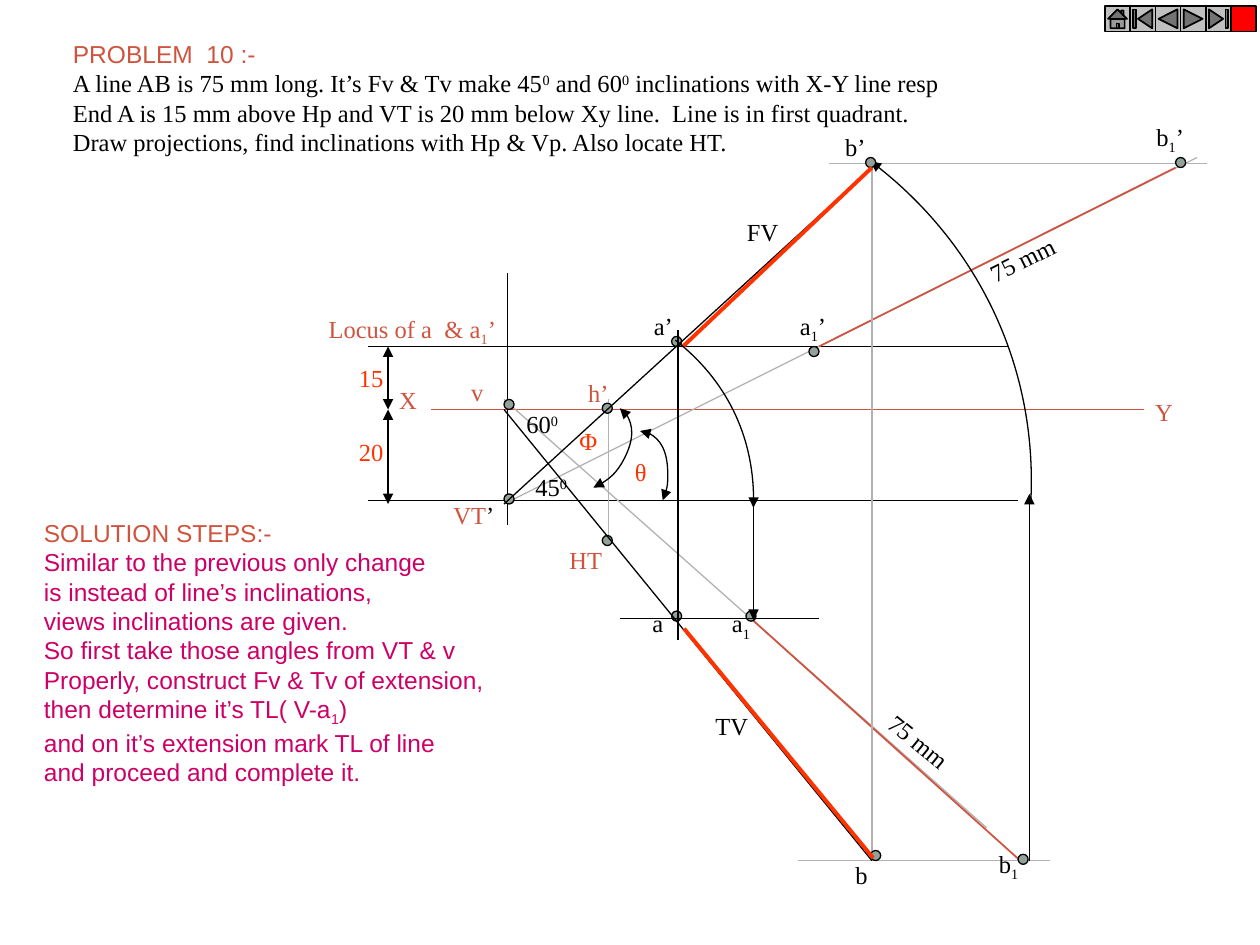
from copy import deepcopy
from dataclasses import dataclass

from lxml import etree
from pptx import Presentation
from pptx.dml.color import RGBColor
from pptx.enum.shapes import MSO_CONNECTOR, MSO_SHAPE as SHAPE
from pptx.enum.text import MSO_AUTO_SIZE
from pptx.oxml.ns import qn
from pptx.util import Inches, Pt


@dataclass(frozen=True)
class Theme:
    paper: str = "FFFFFF"
    ink: str = "000000"
    accent: str = "CF543F"
    red: str = "FF3300"
    magenta: str = "CC0066"
    gray: str = "B2B2B2"
    dot: str = "93A299"
    button: str = "C0C0C0"
    stop: str = "FF0000"
    sans: str = "Arial"
    serif: str = "Times New Roman"
    size: float = 14
    thin: float = 0.75
    medium: float = 1
    thick: float = 2.25


T = Theme()
BASELINES = {"^": "30000", "_": "-25000"}


def rgb(value):
    return RGBColor.from_string(value)


def add_text(slide, x, y, w, h, lines, rotation=0):
    sp = slide.shapes.add_textbox(Inches(x), Inches(y), Inches(w), Inches(h))
    sp.rotation = rotation
    tf = sp.text_frame
    tf.word_wrap = False
    tf.auto_size = MSO_AUTO_SIZE.SHAPE_TO_FIT_TEXT
    for i, (text, color, font) in enumerate(lines):
        p = tf.add_paragraph() if i else tf.paragraphs[0]
        p.font.size, p.font.name = Pt(T.size), font
        p.font.color.rgb = rgb(color)
        for piece in text.split("|"):
            r = p.add_run()
            r.text = piece.lstrip("^_")
            if piece[0] in BASELINES:
                r.font._element.set("baseline", BASELINES[piece[0]])
    return tf


def style_line(sp, color, width, head=False, tail=False):
    sp.line.color.rgb = rgb(color)
    sp.line.width = Pt(width)
    ln = sp.line._get_or_add_ln()
    for tag, wanted in (("a:headEnd", head), ("a:tailEnd", tail)):
        if wanted:
            etree.SubElement(ln, qn(tag)).set("type", "triangle")


def add_line(slide, x1, y1, x2, y2, color=T.ink, width=T.thin, head=False, tail=False):
    sp = slide.shapes.add_connector(
        MSO_CONNECTOR.STRAIGHT, Inches(x1), Inches(y1), Inches(x2), Inches(y2))
    style_line(sp, color, width, head, tail)
    etree.SubElement(sp._element.spPr, qn("a:effectLst"))


def add_preset(slide, kind, x, y, w, h, fill):
    sp = slide.shapes.add_shape(kind, Inches(x), Inches(y), Inches(w), Inches(h))
    sp.shadow.inherit = False
    sp.fill.solid()
    sp.fill.fore_color.rgb = rgb(fill)
    return sp


def add_arc(slide, x, y, center, points, tail=False):
    start, *rest = [(Inches(x + px), Inches(y + py)) for px, py in (*points, center)]
    fb = slide.shapes.build_freeform(*start)
    fb.add_line_segments(rest, close=False)
    sp = fb.convert_to_shape()
    sp.shadow.inherit = False
    sp.fill.background()
    style_line(sp, T.ink, T.thin, True, tail)

    arc = next(sp._element.iter(qn("a:path")))
    *controls, spoke = arc.findall(qn("a:lnTo"))
    for i in range(0, len(controls), 3):
        curve = etree.Element(qn("a:cubicBezTo"))
        controls[i].addprevious(curve)
        for segment in controls[i:i + 3]:
            curve.append(segment[0])
            arc.remove(segment)
    sector = deepcopy(arc)
    sector.set("stroke", "0")
    etree.SubElement(sector, qn("a:close"))
    arc.remove(spoke)
    arc.set("fill", "none")
    arc.addnext(sector)


def panel(slide, x, y, w, h):
    sp = add_preset(slide, SHAPE.ROUNDED_RECTANGLE, x, y, w, h, T.paper)
    sp.adjustments[0] = 0.017
    sp.line.fill.background()


def problem(slide, x, y, w, h):
    body = (
        "A line AB is 75 mm long. It’s Fv & Tv make 45|^0| and 60|^0| inclinations with X-Y line resp",
        "End A is 15 mm above Hp and VT is 20 mm below Xy line.  Line is in first quadrant.",
        "Draw projections, find inclinations with Hp & Vp. Also locate HT.",
    )
    add_text(slide, x, y, w, h, [("PROBLEM  10 :-", T.accent, T.sans)]
             + [(line, T.ink, T.serif) for line in body])


def solution(slide, x, y, w, h):
    steps = (
        "Similar to the previous only change",
        "is instead of line’s inclinations,",
        "views inclinations are given.",
        "So first take those angles from VT & v",
        "Properly, construct Fv & Tv of extension,",
        "then determine it’s TL( V-a|_1|)",
        "and on it’s extension mark TL of line",
        "and proceed and complete it.",
    )
    add_text(slide, x, y, w, h, [("SOLUTION STEPS:-", T.accent, T.sans)]
             + [(step, T.magenta, T.sans) for step in steps])


def construction(slide, x, y):
    lines = (
        (1.42, 2.25, 7.08, 2.25, T.accent),
        (2.03, 1.17, 2.03, 3.17),
        (0.92, 2.97, 6.08, 2.97),
        (0.92, 1.75, 6, 1.75),
        (1.08, 1.75, 1.08, 2.25, T.ink, T.thin, True, True),
        (1.08, 2.25, 1.08, 3, T.ink, T.thin, True, True),
        (2, 3, 7.5, 0.25, T.gray),
        (4.5, 1.75, 7.33, 0.33, T.accent, T.medium),
        (2, 2.17, 5.83, 5.57, T.gray),
        (3.95, 3.9, 6.13, 5.86, T.accent, T.medium),
        (4.33, 5.83, 6.33, 5.83, T.gray),
        (7.58, 0.3, 4.58, 0.3, T.gray),
        (6.17, 5.83, 6.17, 2.92, T.ink, T.thin, False, True),
        (4.92, 0.33, 4.92, 5.83, T.gray),
        (2.83, 2.17, 2.83, 3.33, T.gray),
    )
    points = ((2, 2.92), (2, 2.17), (4.42, 1.75), (7.33, 0.25), (6.08, 5.78), (3.92, 3.85),
              (4.87, 0.25), (3.33, 1.67), (4.91, 5.75), (3.33, 3.85), (2.78, 3.25), (2.78, 2.2))
    views = (
        (4.92, 0.33, 2, 3),
        (3.38, 1.62, 3.38, 4.08),
        (2.92, 3.91, 4.5, 3.91),
        (4.92, 0.33, 3.42, 1.75, T.red, T.thick),
        (2, 2.25, 4.92, 5.83),
        (4.93, 5.81, 3.43, 3.99, T.red, T.thick),
        (3.98, 3, 3.98, 3.92, T.ink, T.thin, False, True),
    )
    for x1, y1, x2, y2, *style in lines:
        add_line(slide, x + x1, y + y1, x + x2, y + y2, *style)
    add_arc(slide, x, y, (3.02, 2.82), [(4.91, 0.28), (5.76, 0.92), (6.24, 1.94), (6.18, 3)])
    for px, py in points:
        dot = add_preset(slide, SHAPE.OVAL, x + px, y + py, 0.08, 0.08, T.dot)
        style_line(dot, T.ink, T.thin)
    for x1, y1, x2, y2, *style in views:
        add_line(slide, x + x1, y + y1, x + x2, y + y2, *style)
    add_arc(slide, x, y, (2.4, 2.95), [(3.98, 3.03), (4, 2.51), (3.77, 2.02), (3.36, 1.7)])
    add_arc(slide, x, y, (3.08, 2.77), [(3.08, 2.42), (3.2, 2.42), (3.3, 2.57), (3.3, 2.77),
                                        (3.3, 2.84), (3.29, 2.91), (3.26, 2.97)], True)
    add_arc(slide, x, y, (2.75, 2.55), [(2.92, 2.24), (3.02, 2.29), (3.04, 2.48), (2.95, 2.65),
                                        (2.89, 2.76), (2.79, 2.84), (2.71, 2.87)], True)


def labels(slide, x, y):
    groups = {
        T.accent: (("X", 1.07, 2.01, 0.34), ("Y", 7.07, 2.1, 0.34), ("v", 1.64, 1.94, 0.3),
                   ("Locus of a  & a|_1|’", 0.51, 1.44, 1.53),
                   ("HT", 2.42, 3.28, 0.48), ("h’", 2.57, 1.95, 0.37)),
        T.red: (("15", 0.75, 1.83, 0.4), ("20", 0.75, 2.42, 0.4),
                ("θ", 2.94, 2.58, 0.3), ("Φ", 2.5, 2.33, 0.35)),
        T.ink: (("a|_1|’", 4.25, 1.42, 0.41), ("b|_1|’", 7.08, -0.08, 0.43),
                ("b|_1", 5.83, 5.69, 0.36), ("a|_1", 3.71, 3.78, 0.35),
                ("b’", 4.61, 0, 0.36), ("a’", 3.09, 1.42, 0.35),
                ("b", 4.69, 5.78, 0.3), ("a", 3.08, 3.78, 0.29),
                ("FV", 3.83, 0.67, 0.45), ("TV", 3.58, 4.59, 0.46),
                ("45|^0", 2.15, 2.7, 0.46), ("60|^0", 2.08, 2.2, 0.46),
                ("75 mm", 5.74, 0.89, 0.75, 333.6), ("75 mm", 4.92, 4.72, 0.75, 39.3)),
    }
    for color, items in groups.items():
        for text, tx, ty, w, *rotation in items:
            add_text(slide, x + tx, y + ty, w, 0.33, [(text, color, T.serif)], *rotation)
    tf = add_text(slide, x + 1.5, y + 2.92, 0.54, 0.33, [("VT|’", T.accent, T.serif)])
    tf.paragraphs[0].runs[1].font.color.rgb = rgb(T.ink)


def navigation(slide, x, y, size):
    kinds = (SHAPE.ACTION_BUTTON_HOME, SHAPE.ACTION_BUTTON_BEGINNING,
             SHAPE.ACTION_BUTTON_BACK_OR_PREVIOUS, SHAPE.ACTION_BUTTON_FORWARD_OR_NEXT,
             SHAPE.ACTION_BUTTON_END, SHAPE.ACTION_BUTTON_CUSTOM)
    for i, kind in enumerate(kinds):
        fill = T.stop if kind == SHAPE.ACTION_BUTTON_CUSTOM else T.button
        style_line(add_preset(slide, kind, x + i * size, y, size, size, fill), T.ink, T.medium)


def main():
    prs = Presentation()
    prs.slide_width, prs.slide_height = Inches(10), Inches(7.5)
    slide = prs.slides.add_slide(prs.slide_layouts[6])
    panel(slide, 0.1, 0.11, 9.8, 7.29)
    problem(slide, 0.48, 0.26, 7.11, 1.03)
    construction(slide, 2, 1)
    labels(slide, 2, 1)
    solution(slide, 0.25, 4.06, 3.75, 2.19)
    navigation(slide, 8.77, 0.05, 0.2)
    prs.save("out.pptx")


if __name__ == "__main__":
    main()
